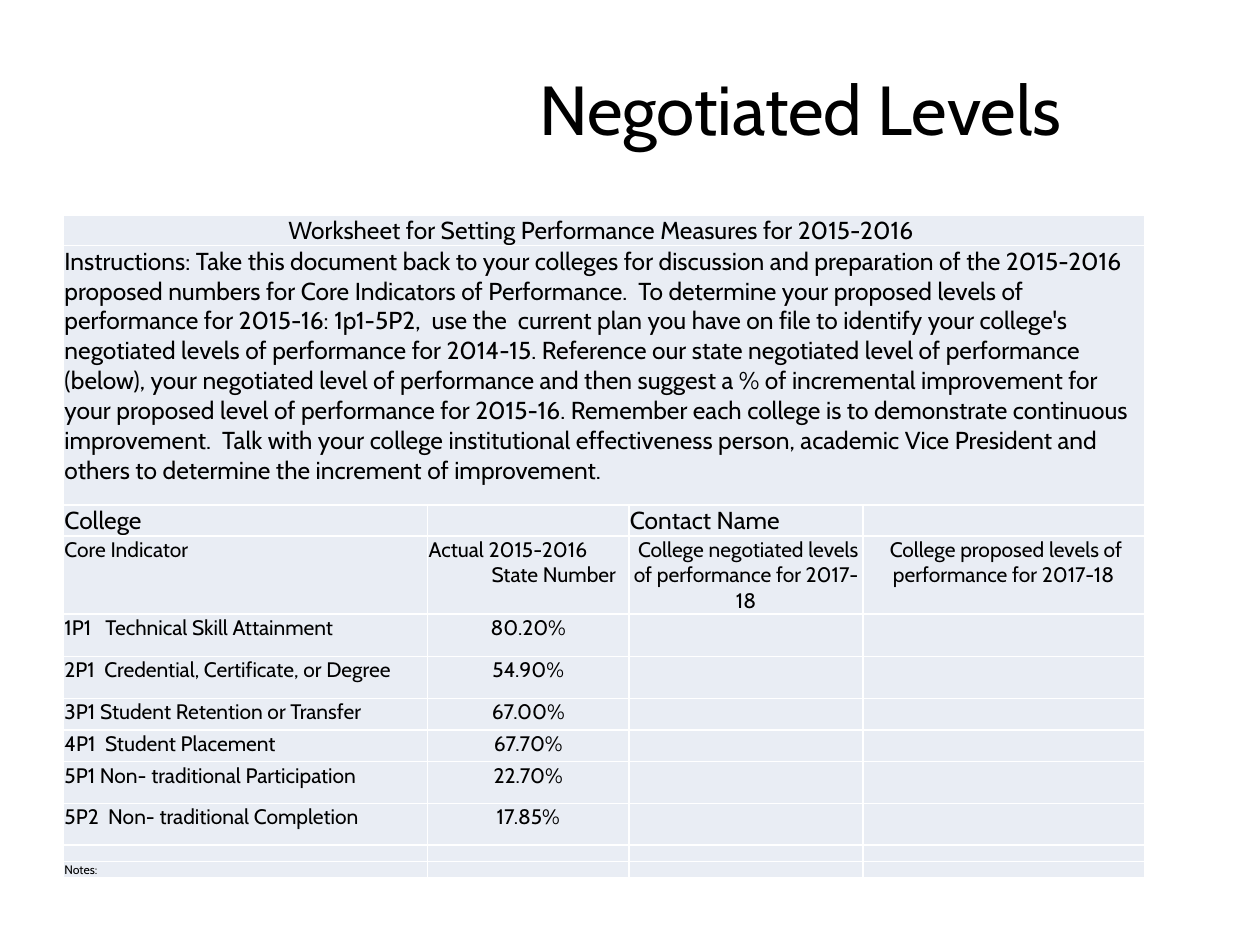
from dataclasses import dataclass

from lxml import etree
from pptx import Presentation
from pptx.dml.color import RGBColor
from pptx.enum.text import MSO_ANCHOR, MSO_AUTO_SIZE, PP_ALIGN
from pptx.oxml.ns import qn
from pptx.util import Cm, Pt

LEFT, CENTER = PP_ALIGN.LEFT, PP_ALIGN.CENTER
MIDDLE, TOP = MSO_ANCHOR.MIDDLE, MSO_ANCHOR.TOP
FONT = "Cabin"
BLACK, WHITE, PALE = "000000", "FFFFFF", "E9EDF4"
COLUMN_WIDTHS = (7.34, 4.06, 4.72, 5.67)
EMPTY_SIZE = 7
INSTRUCTIONS = (
    "Instructions: Take this document back to your colleges for discussion and "
    "preparation of the 2015-2016 proposed numbers for Core Indicators of Performance.  "
    "To determine your proposed levels of performance for 2015-16: 1p1-5P2,  use the  "
    "current plan you have on file to identify your college's negotiated levels of "
    "performance for 2014-15. Reference our state negotiated level of performance (below), "
    "your negotiated level of performance and then suggest a % of incremental improvement "
    "for your proposed level of performance for 2015-16. Remember each college is to "
    "demonstrate continuous improvement.  Talk with your college institutional "
    "effectiveness person, academic Vice President and others to determine the increment "
    "of improvement."
)


@dataclass
class Line:
    text: str
    size: float
    align: PP_ALIGN = LEFT
    indent: float = 0


@dataclass
class Row:
    height: float
    cells: tuple = ()
    merged: bool = False


def indicator(height: float, name: str, rate: str) -> Row:
    return Row(height, ((Line(name, 12),), (Line(rate, 12, CENTER),)))


ROWS = (
    Row(0.61, ((Line("Worksheet for Setting Performance Measures for 2015-2016 ", 14, CENTER),),), True),
    Row(5.23, ((Line(INSTRUCTIONS, 14),),), True),
    Row(0.62, ((Line("College", 14),), (), (Line("Contact Name", 14),))),
    Row(1.55, (
        (Line("Core Indicator", 12),),
        (Line("Actual 2015-2016", 12), Line("State Number", 12, LEFT, 1.27)),
        (Line(" College negotiated levels of performance for 2017-18", 12, CENTER),),
        (Line(" College proposed levels of performance for 2017-18", 12, CENTER),),
    )),
    indicator(0.86, "1P1   Technical Skill Attainment", "80.20%"),
    indicator(0.84, "2P1  Credential, Certificate, or Degree", "54.90%"),
    indicator(0.64, "3P1 Student Retention or Transfer", "67.00%"),
    indicator(0.64, "4P1  Student Placement", "67.70%"),
    indicator(0.84, "5P1 Non- traditional Participation", "22.70%"),
    indicator(0.84, "5P2  Non- traditional Completion", "17.85%"),
    Row(0.33),
    Row(0.33, ((Line("Notes:", 7),),)),
)


def color(value: str) -> RGBColor:
    return RGBColor.from_string(value)


def apply(target, values: dict) -> None:
    for name, value in values.items():
        setattr(target, name, value)


def write_line(paragraph, line: Line) -> None:
    paragraph.alignment = line.align
    if line.indent:
        paragraph._p.get_or_add_pPr().set("marL", str(Cm(line.indent)))
    if line.text:
        paragraph.text = line.text
    for span in paragraph.runs:
        apply(span.font, {"name": FONT, "size": Pt(line.size), "bold": False})
        span.font.color.rgb = color(BLACK)
    etree.SubElement(paragraph._p, qn("a:endParaRPr"), sz=str(round(line.size * 100)))


def style_cell(cell) -> None:
    apply(cell, {
        "margin_left": Cm(0.02), "margin_right": Cm(0.02),
        "margin_top": Cm(0.02), "margin_bottom": 0, "vertical_anchor": TOP,
    })
    properties = cell._tc.get_or_add_tcPr()
    for side in ("lnL", "lnR", "lnT", "lnB"):
        border = etree.SubElement(properties, qn(f"a:{side}"), w=str(Pt(1)))
        solid = etree.SubElement(border, qn("a:solidFill"))
        etree.SubElement(solid, qn("a:srgbClr"), val=WHITE)
    cell.fill.solid()
    cell.fill.fore_color.rgb = color(PALE)


def write_cell(cell, lines: tuple) -> None:
    style_cell(cell)
    frame = cell.text_frame
    for index, line in enumerate(lines or (Line("", EMPTY_SIZE),)):
        paragraph = frame.add_paragraph() if index else frame.paragraphs[0]
        write_line(paragraph, line)


def add_title(page) -> None:
    title = page.shapes.title
    apply(title, {"left": Cm(7.82), "top": Cm(1.7), "width": Cm(16.94), "height": Cm(2.62)})
    apply(title.text_frame, {
        "word_wrap": True, "auto_size": MSO_AUTO_SIZE.NONE, "vertical_anchor": MIDDLE,
    })
    write_line(title.text_frame.paragraphs[0], Line("Negotiated Levels \v", 39.6, CENTER))


def add_worksheet(page) -> None:
    table = page.shapes.add_table(
        len(ROWS), len(COLUMN_WIDTHS), Cm(1.28), Cm(4.33),
        Cm(sum(COLUMN_WIDTHS)), Cm(sum(row.height for row in ROWS)),
    ).table
    apply(table, {"first_row": False, "horz_banding": False})
    for column, width in zip(table.columns, COLUMN_WIDTHS):
        column.width = Cm(width)
    last = len(COLUMN_WIDTHS) - 1
    for index, row in enumerate(ROWS):
        table.rows[index].height = Cm(row.height)
        for position in range(len(COLUMN_WIDTHS)):
            lines = row.cells[position] if position < len(row.cells) else ()
            write_cell(table.cell(index, position), lines)
        if row.merged:
            table.cell(index, 0).merge(table.cell(index, last))


def main() -> None:
    deck = Presentation()
    apply(deck, {"slide_width": Cm(25.4), "slide_height": Cm(19.05)})
    page = deck.slides.add_slide(deck.slide_layouts[5])
    add_title(page)
    add_worksheet(page)
    deck.save("out.pptx")


if __name__ == "__main__":
    main()
